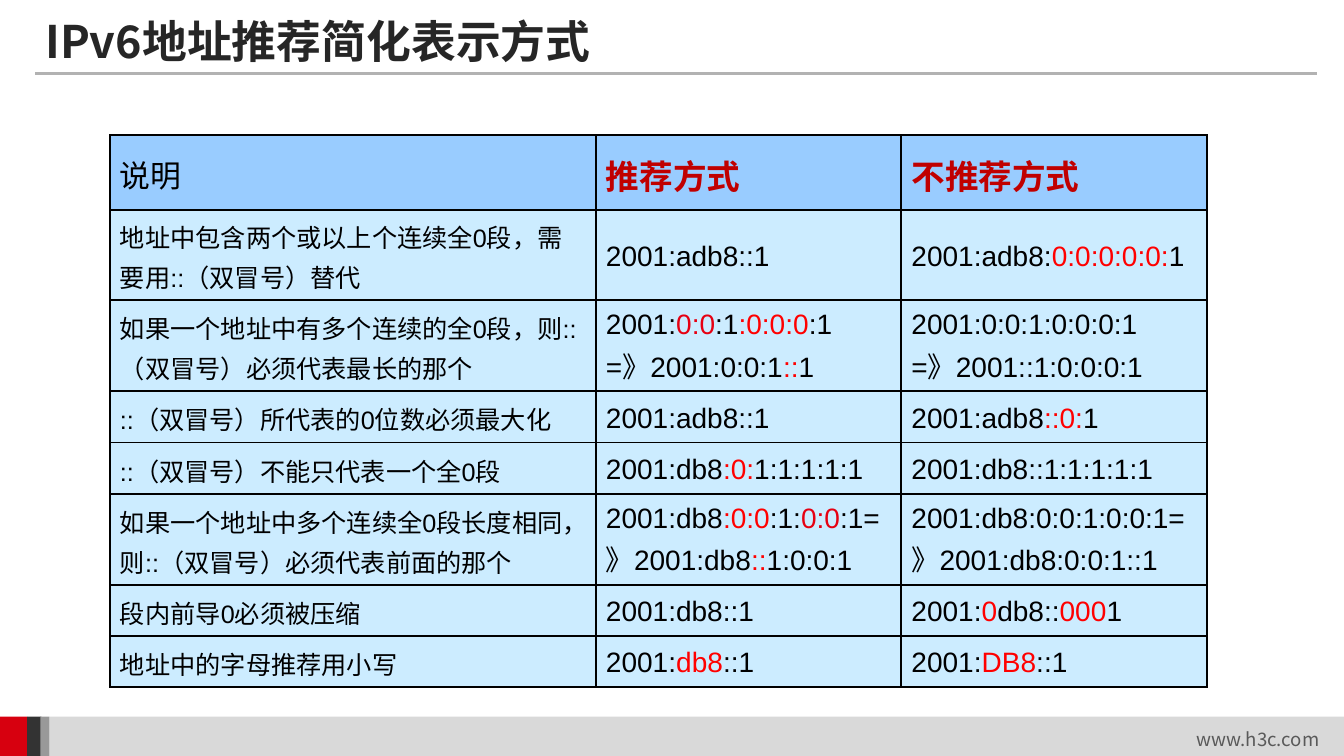
"""Build the slide on recommended ways of shortening IPv6 addresses."""
from dataclasses import dataclass

from lxml import etree
from pptx import Presentation
from pptx import util as u
from pptx.dml.color import RGBColor
from pptx.enum import shapes, text
from pptx.oxml import ns

CJK = "Noto Sans CJK SC"
BLACK = "000000"
MARKS = {"*": "FF0000", "^": "E60012"}


@dataclass(frozen=True)
class Style:
    size: float
    color: str = BLACK
    bold: bool = False
    font: str = "Arial"


@dataclass(frozen=True)
class Bar:
    left: float
    width: float
    color: str


@dataclass(frozen=True)
class Label:
    words: str
    left: float
    top: float
    width: float
    height: float
    wrap: bool
    style: Style


@dataclass(frozen=True)
class Rule:
    note: str
    good: str
    bad: str
    height: float = 0.51


BARS = [
    Bar(0.49, 12.84, "D9D9D9"),
    Bar(0, 0.27, "D7000F"),
    Bar(0.27, 0.14, "333333"),
    Bar(0.4, 0.09, "999999"),
]
LABELS = [
    Label("www.h3c.com", 11.77, 7.17, 1.43, 0.33, False, Style(13.3, "595959", font=CJK)),
    Label("IPv6地址推荐简化表示方式", 0.35, 0.07, 11.28, 0.67, True, Style(32, "262626", True, CJK)),
]
RULES = [
    Rule("说明", "推荐方式", "不推荐方式", 0.74),
    Rule("地址中包含两个或以上个连续全0段，需要用::（双冒号）替代",
         "2001:adb8::1", "2001:adb8:|*0:0:0:0:0:|1", 0.9),
    Rule("如果一个地址中有多个连续的全0段，则::（双冒号）必须代表最长的那个",
         "2001:|^0:0|:1|*:0:0:0|:1\n=》2001:0:0:1|*::|1",
         "2001:0:0:1:0:0:0:1\n=》2001::1:0:0:0:1", 0.9),
    Rule("::（双冒号）所代表的0位数必须最大化", "2001:adb8::1", "2001:adb8|*::0:|1"),
    Rule("::（双冒号）不能只代表一个全0段", "2001:db8|*:0:|1:1:1:1:1", "2001:db8::1:1:1:1:1"),
    Rule("如果一个地址中多个连续全0段长度相同，则::（双冒号）必须代表前面的那个",
         "2001:db8|*:0:0|:1:|^0:0|:1=》2001:db8|*::|1:0:0:1",
         "2001:db8:0:0:1:0:0:1=》2001:db8:0:0:1::1", 0.9),
    Rule("段内前导0必须被压缩", "2001:db8::1", "2001:|*0|db8::|*000|1"),
    Rule("地址中的字母推荐用小写", "2001:|*db8|::1", "2001:|*DB8|::1"),
]
COLUMNS = [4.82, 3.03, 3.03]
HEAD_STYLES = [Style(22)] + [Style(24, "C00000", True)] * 2
BODY_STYLES = [Style(18)] + [Style(20)] * 2


def rgb(color: str) -> RGBColor:
    return RGBColor.from_string(color)


def style_span(span, style: Style, color: str) -> None:
    span.font.size = u.Pt(style.size)
    span.font.bold = style.bold
    span.font.color.rgb = rgb(color)
    span.font.name = style.font
    etree.SubElement(span.font._element, ns.qn("a:ea"), typeface=CJK)


def write_marked(para, words: str, style: Style) -> None:
    for number, line in enumerate(words.split("\n")):
        if number:
            para.add_line_break()
        for part in line.split("|"):
            color = MARKS.get(part[0], style.color)
            span = para.add_run()
            span.text = part[1:] if part[0] in MARKS else part
            style_span(span, style, color)


def draw_bar(page, bar: Bar) -> None:
    box = page.shapes.add_shape(shapes.MSO_SHAPE.RECTANGLE, u.Inches(bar.left),
                                u.Inches(7.11), u.Inches(bar.width), u.Inches(0.4))
    box.shadow.inherit = False
    box.fill.solid()
    box.fill.fore_color.rgb = rgb(bar.color)
    box.line.fill.background()


def draw_label(page, label: Label) -> None:
    box = page.shapes.add_textbox(u.Inches(label.left), u.Inches(label.top),
                                  u.Inches(label.width), u.Inches(label.height))
    frame = box.text_frame
    frame.word_wrap = label.wrap
    frame.vertical_anchor = text.MSO_ANCHOR.MIDDLE
    frame.text = label.words
    style_span(frame.paragraphs[0].runs[0], label.style, label.style.color)


def draw_title_line(page) -> None:
    line = page.shapes.add_connector(shapes.MSO_CONNECTOR.STRAIGHT, u.Inches(0.35),
                                     u.Inches(0.73), u.Inches(13.06), u.Inches(0.73))
    line.line.color.rgb = rgb("B2B2B2")
    line.line.width = u.Pt(2.25)
    etree.SubElement(line._element.spPr, ns.qn("a:effectLst"))


def border_cell(cell) -> None:
    props = cell._tc.get_or_add_tcPr()
    for side in ("lnL", "lnR", "lnT", "lnB"):
        edge = etree.SubElement(props, ns.qn(f"a:{side}"), w=str(u.Pt(1.5)))
        fill = etree.SubElement(edge, ns.qn("a:solidFill"))
        etree.SubElement(fill, ns.qn("a:srgbClr"), val=BLACK)


def draw_cell(cell, words: str, style: Style, fill: str) -> None:
    border_cell(cell)
    cell.fill.solid()
    cell.fill.fore_color.rgb = rgb(fill)
    cell.vertical_anchor = text.MSO_ANCHOR.MIDDLE
    para = cell.text_frame.paragraphs[0]
    para.line_spacing = 1.1
    write_marked(para, words, style)


def draw_rules(page) -> None:
    height = sum(rule.height for rule in RULES)
    table = page.shapes.add_table(len(RULES), len(COLUMNS), u.Inches(1.09), u.Inches(1.34),
                                  u.Inches(sum(COLUMNS)), u.Inches(height)).table
    table.first_row = table.horz_banding = False
    for column, width in zip(table.columns, COLUMNS):
        column.width = u.Inches(width)
    for index, (row, rule) in enumerate(zip(table.rows, RULES)):
        row.height = u.Inches(rule.height)
        styles = BODY_STYLES if index else HEAD_STYLES
        fill = "CCECFF" if index else "99CCFF"
        for cell, words, style in zip(row.cells, (rule.note, rule.good, rule.bad), styles):
            draw_cell(cell, words, style, fill)


def main() -> None:
    deck = Presentation()
    deck.slide_width, deck.slide_height = u.Inches(13.33), u.Inches(7.5)
    page = deck.slides.add_slide(deck.slide_layouts[6])
    for bar in BARS:
        draw_bar(page, bar)
    draw_title_line(page)
    for label in LABELS:
        draw_label(page, label)
    draw_rules(page)
    deck.save("out.pptx")


if __name__ == "__main__":
    main()
